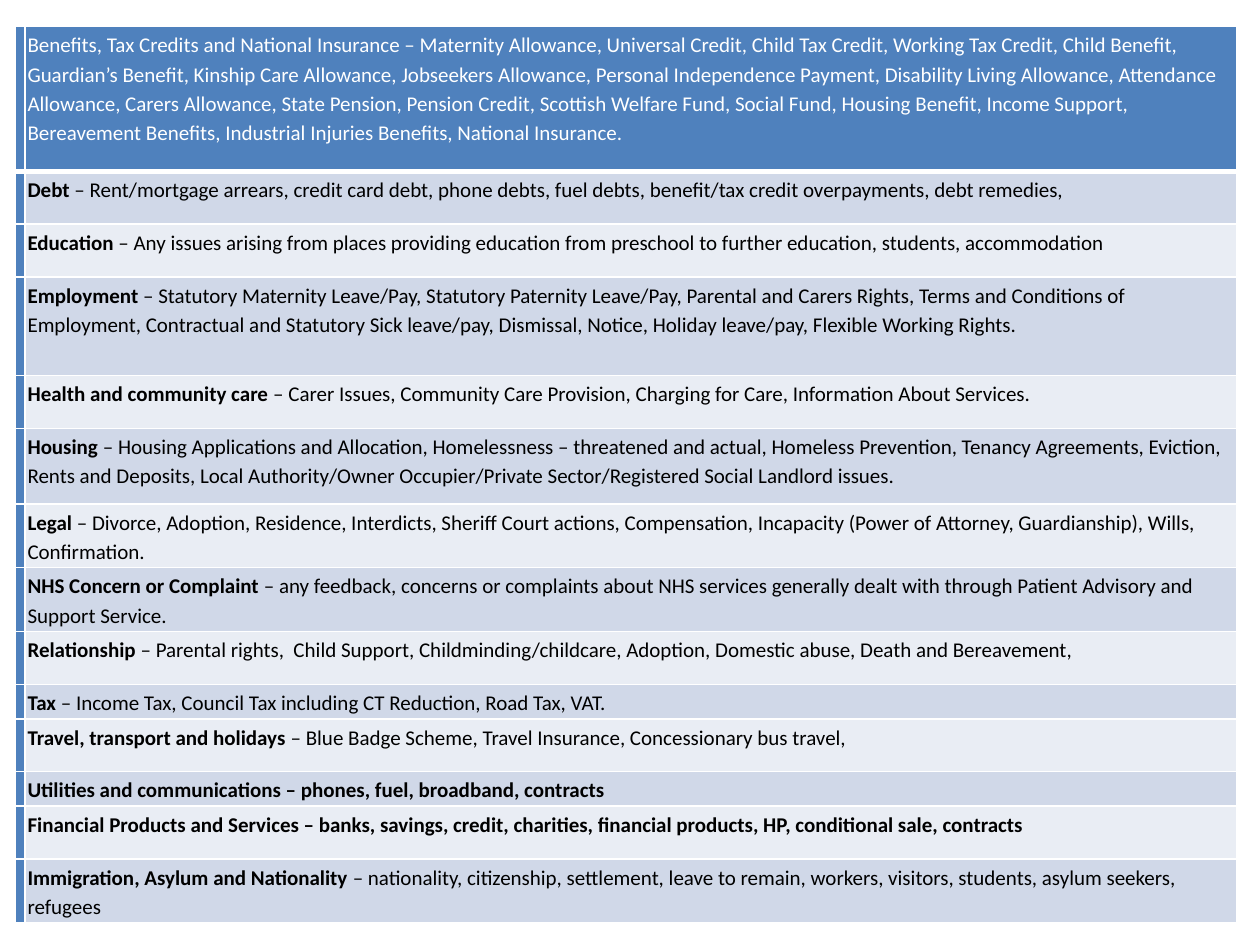
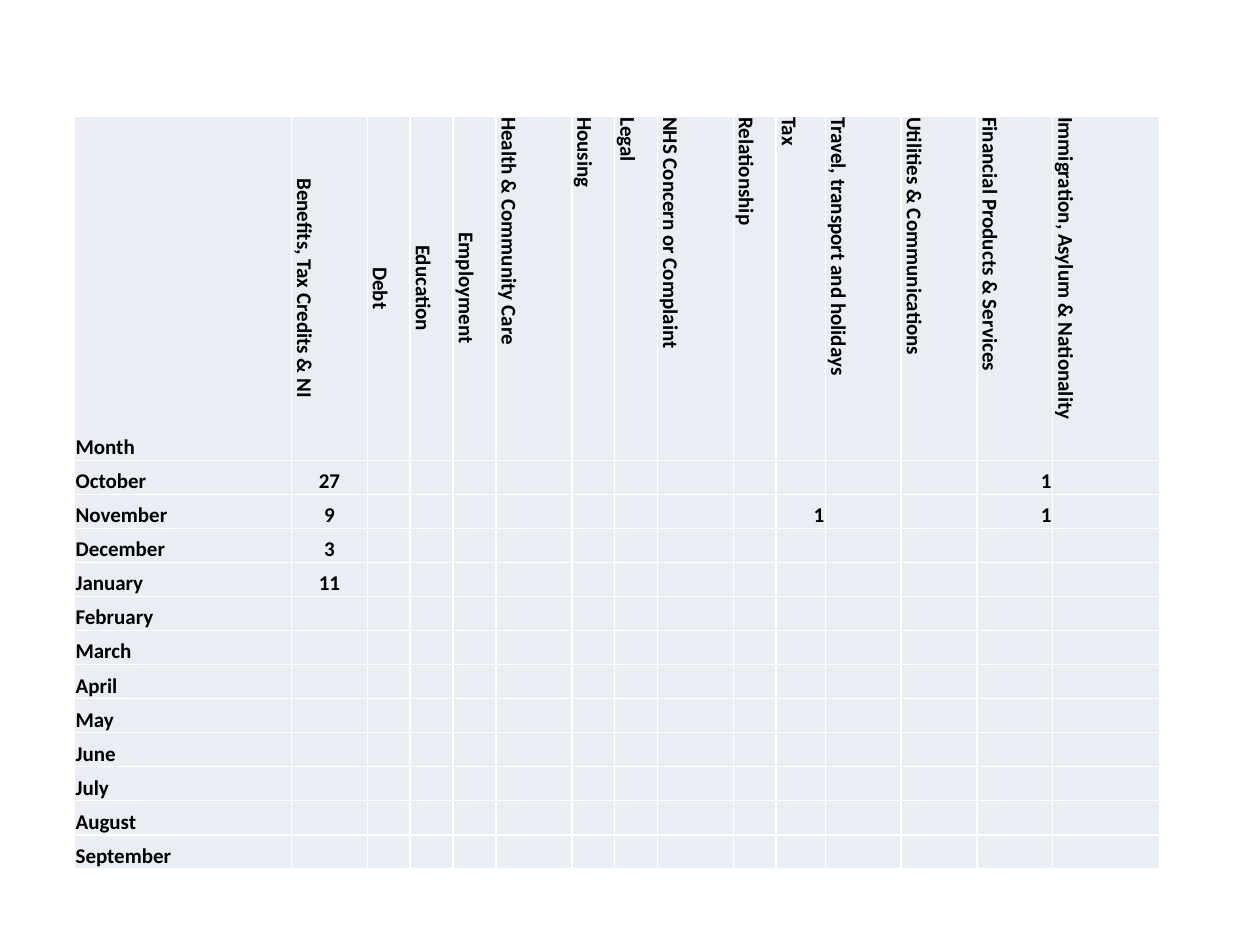
from lxml import etree
from pptx import Presentation
from pptx.dml.color import RGBColor
from pptx.enum.text import MSO_ANCHOR, PP_ALIGN
from pptx.oxml.ns import qn
from pptx.util import Inches, Pt

LEFT, CENTER, RIGHT = PP_ALIGN.LEFT, PP_ALIGN.CENTER, PP_ALIGN.RIGHT
TOP, BOTTOM = MSO_ANCHOR.TOP, MSO_ANCHOR.BOTTOM

WHITE = RGBColor(0xFF, 0xFF, 0xFF)
BLACK = RGBColor(0x00, 0x00, 0x00)
BLUE = RGBColor(0x4F, 0x81, 0xBD)
BAND_DARK = RGBColor(0xD0, 0xD8, 0xE8)
BAND_LIGHT = RGBColor(0xE9, 0xED, 0xF4)

SLIDE_W, SLIDE_H = Inches(10), Inches(7.5)
FONT = "Calibri"
TEXT_SIZE = Pt(12)

# Boxes: left, top, width and height in inches
GUIDE_BOX = [Inches(n) for n in (0.12, 0.21, 9.69, 6.79)]
MONTHLY_BOX = [Inches(n) for n in (0.59, 0.92, 8.62, 5.98)]

GUIDE_MARGINS = dict.fromkeys(
    ("margin_left", "margin_top", "margin_right", "margin_bottom"), Inches(0.02))
GUIDE_FORMAT = {**GUIDE_MARGINS, "vertical_anchor": TOP}
MONTHLY_FORMAT = {
    **dict.fromkeys(("margin_left", "margin_top", "margin_right"), Inches(0.01)),
    "margin_bottom": 0,
    "vertical_anchor": BOTTOM,
}

# Row weight, bold heading, plain explanation
ADVICE_AREAS = [
    (1.15, "", "Benefits, Tax Credits and National Insurance – Maternity Allowance, "
     "Universal Credit, Child Tax Credit, Working Tax Credit, Child Benefit, "
     "Guardian’s Benefit, Kinship Care Allowance, Jobseekers Allowance, Personal "
     "Independence Payment, Disability Living Allowance, Attendance Allowance, "
     "Carers Allowance, State Pension, Pension Credit, Scottish Welfare Fund, "
     "Social Fund, Housing Benefit, Income Support, Bereavement Benefits, "
     "Industrial Injuries Benefits, National Insurance."),
    (0.42, "Debt", " – Rent/mortgage arrears, credit card debt, phone debts, fuel debts, "
     "benefit/tax credit overpayments, debt remedies,"),
    (0.42, "Education", " – Any issues arising from places providing education from "
     "preschool to further education, students, accommodation"),
    (0.78, "Employment", " – Statutory Maternity Leave/Pay, Statutory Paternity Leave/Pay, "
     "Parental and Carers Rights, Terms and Conditions of Employment, Contractual and "
     "Statutory Sick leave/pay, Dismissal, Notice, Holiday leave/pay, Flexible Working "
     "Rights."),
    (0.42, "Health and community care ", "– Carer Issues, Community Care Provision, "
     "Charging for Care, Information About Services."),
    (0.6, "Housing", " – Housing Applications and Allocation, Homelessness – threatened "
     "and actual, Homeless Prevention, Tenancy Agreements, Eviction, Rents and Deposits, "
     "Local Authority/Owner Occupier/Private Sector/Registered Social Landlord issues."),
    (0.42, "Legal", " – Divorce, Adoption, Residence, Interdicts, Sheriff Court actions, "
     "Compensation, Incapacity (Power of Attorney, Guardianship), Wills, Confirmation."),
    (0.42, "NHS Concern or Complaint ", "– any feedback, concerns or complaints about NHS "
     "services generally dealt with through Patient Advisory and Support Service."),
    (0.42, "Relationship", " – Parental rights,  Child Support, Childminding/childcare, "
     "Adoption, Domestic abuse, Death and Bereavement,"),
    (0.24, "Tax", " – Income Tax, Council Tax including CT Reduction, Road Tax, VAT."),
    (0.42, "Travel, transport and holidays ", "– Blue Badge Scheme, Travel Insurance, "
     "Concessionary bus travel,"),
    (0.24, "Utilities and communications – phones, fuel, broadband, contracts", ""),
    (0.42, "Financial Products and Services – banks, savings, credit, charities, "
     "financial products, HP, conditional sale, contracts", ""),
    (0.42, "Immigration, Asylum and Nationality ", "– nationality, citizenship, "
     "settlement, leave to remain, workers, visitors, students, asylum seekers, refugees"),
]

# Column heading, column weight, alignment of the heading
CATEGORIES = [
    ("Month", 1.72, LEFT),
    ("Benefits, Tax Credits & NI", 0.6, CENTER),
    ("Debt", 0.34, CENTER),
    ("Education", 0.34, CENTER),
    ("Employment", 0.34, CENTER),
    ("Health & Community Care", 0.6, LEFT),
    ("Housing", 0.34, LEFT),
    ("Legal", 0.34, LEFT),
    ("NHS Concern or Complaint", 0.6, LEFT),
    ("Relationship", 0.34, LEFT),
    ("Tax", 0.39, LEFT),
    ("Travel, transport and holidays", 0.6, LEFT),
    ("Utilities & Communications", 0.6, LEFT),
    ("Financial Products & Services", 0.6, LEFT),
    ("Immigration, Asylum & Nationality", 0.85, LEFT),
]
MONTHS = ["October", "November", "December", "January", "February", "March",
          "April", "May", "June", "July", "August", "September"]
BENEFITS, TAX, FINANCIAL = 1, 10, 13
ENQUIRIES = {
    "October": {BENEFITS: 27, FINANCIAL: 1},
    "November": {BENEFITS: 9, TAX: 1, FINANCIAL: 1},
    "December": {BENEFITS: 3},
    "January": {BENEFITS: 11},
}


def share_out(lines, weights, total):
    """Size the columns or rows so that they fill total in proportion to weights."""
    for line, weight in zip(lines, weights):
        size = round(total * weight / sum(weights))
        if hasattr(line, "width"):
            line.width = size
        else:
            line.height = size


def add_grid(slide, box, column_weights, row_weights):
    table = slide.shapes.add_table(len(row_weights), len(column_weights), *box).table
    table.first_row = table.horz_banding = False
    share_out(table.columns, column_weights, box[2])
    share_out(table.rows, row_weights, box[3])
    return table


def set_borders(cell, bottom_width):
    """Draw white cell borders; they have to stand before the fill in the XML."""
    properties = cell._tc.get_or_add_tcPr()
    widths = {"a:lnL": 1, "a:lnR": 1, "a:lnT": 1, "a:lnB": bottom_width}
    for position, (side, width) in enumerate(widths.items()):
        border = etree.Element(qn(side), w=str(Pt(width)))
        fill = etree.SubElement(border, qn("a:solidFill"))
        etree.SubElement(fill, qn("a:srgbClr"), val=str(WHITE))
        properties.insert(position, border)


def fill_cell(cell, fill, cell_format, runs=(), color=BLACK, align=LEFT,
              spacing=None, bottom_width=1):
    """Format a cell and write its runs, given as (text, bold) pairs."""
    cell.fill.solid()
    cell.fill.fore_color.rgb = fill
    set_borders(cell, bottom_width)
    for name, value in cell_format.items():
        setattr(cell, name, value)
    paragraph = cell.text_frame.paragraphs[0]
    paragraph.alignment = align
    paragraph.line_spacing = spacing
    for text, bold in runs:
        if text:
            run = paragraph.add_run()
            run.text = text
            for name, value in {"name": FONT, "size": TEXT_SIZE, "bold": bold}.items():
                setattr(run.font, name, value)
            run.font.color.rgb = color
    # Keeps empty cells from growing to the default text size
    paragraph._p.get_or_add_endParaRPr().set("sz", str(int(TEXT_SIZE.pt * 100)))


def add_advice_guide(slide, box):
    table = add_grid(slide, box, [0.07, 9.61], [area[0] for area in ADVICE_AREAS])
    for row, (_, heading, explanation) in enumerate(ADVICE_AREAS):
        is_header = row == 0
        band = BLUE if is_header else BAND_DARK if row % 2 else BAND_LIGHT
        bottom_width = 3 if is_header else 1
        fill_cell(table.cell(row, 0), BLUE, GUIDE_FORMAT, bottom_width=bottom_width)
        fill_cell(table.cell(row, 1), band, GUIDE_FORMAT,
                  [(heading, True), (explanation, False)],
                  color=WHITE if is_header else BLACK,
                  spacing=1.15, bottom_width=bottom_width)


def add_monthly_enquiries(slide, box):
    table = add_grid(slide, box, [category[1] for category in CATEGORIES],
                     [2.73] + [0.27] * len(MONTHS))
    for column, (heading, _, align) in enumerate(CATEGORIES):
        cell = table.cell(0, column)
        fill_cell(cell, BAND_LIGHT, MONTHLY_FORMAT, [(heading, True)], align=align)
        if column > 0:
            cell._tc.get_or_add_tcPr().set("vert", "vert")

    for row, month in enumerate(MONTHS, start=1):
        entries = {0: month, **ENQUIRIES.get(month, {})}
        for column in range(len(CATEGORIES)):
            align = {0: LEFT, BENEFITS: CENTER}.get(column, RIGHT)
            fill_cell(table.cell(row, column), BAND_LIGHT, MONTHLY_FORMAT,
                      [(str(entries.get(column, "")), True)], align=align)


def main():
    deck = Presentation()
    deck.slide_width, deck.slide_height = SLIDE_W, SLIDE_H
    blank = deck.slide_layouts[6]
    add_advice_guide(deck.slides.add_slide(blank), GUIDE_BOX)
    add_monthly_enquiries(deck.slides.add_slide(blank), MONTHLY_BOX)
    deck.save("out.pptx")


if __name__ == "__main__":
    main()
